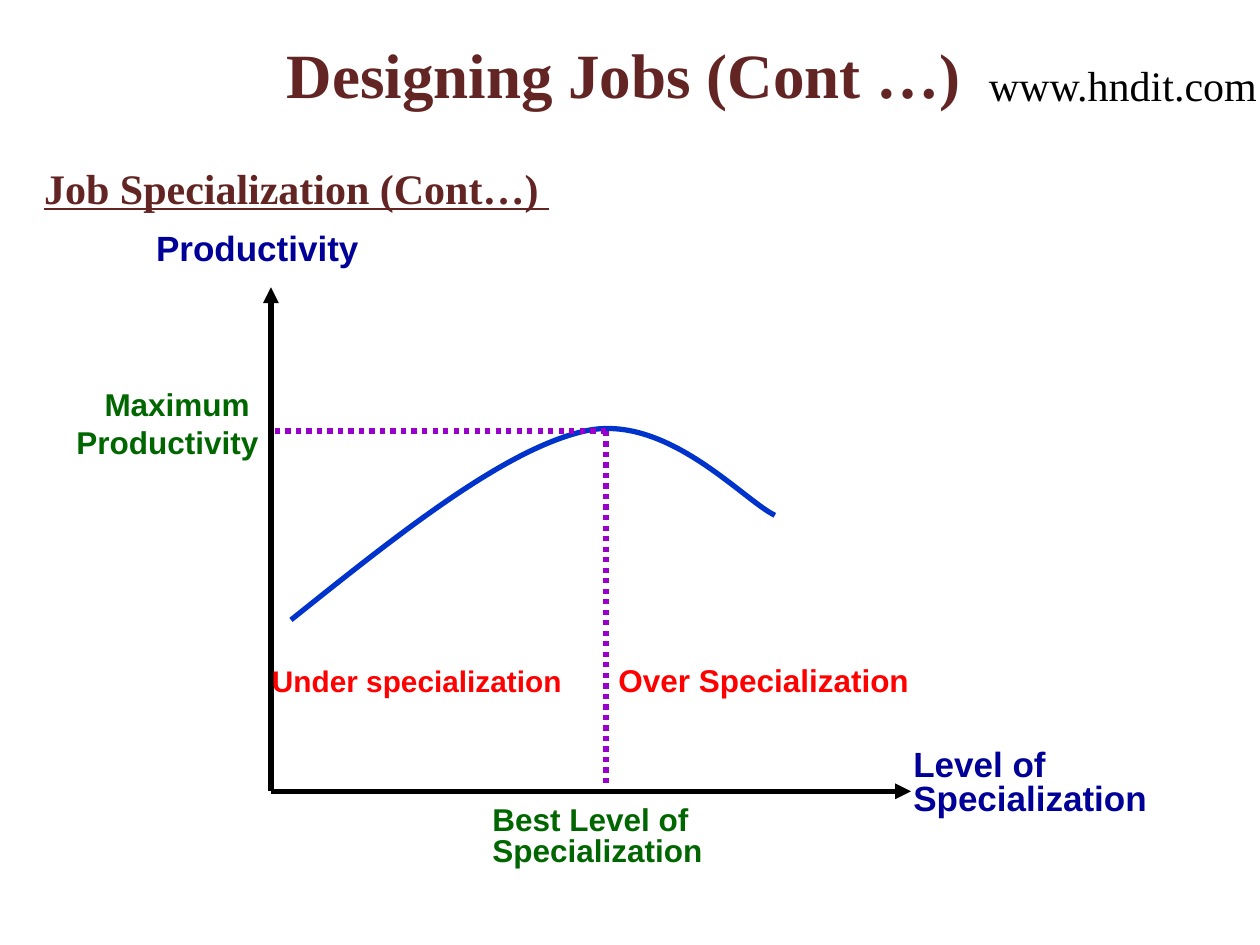
from lxml.etree import SubElement
from pptx import Presentation
from pptx.dml.color import RGBColor
from pptx.enum.dml import MSO_LINE
from pptx.enum.shapes import MSO_CONNECTOR
from pptx.enum.text import MSO_ANCHOR, MSO_AUTO_SIZE, PP_ALIGN
from pptx.oxml.ns import qn
from pptx.util import Inches, Pt

BLACK = RGBColor(0x00, 0x00, 0x00)
MAROON = RGBColor(0x63, 0x25, 0x23)
NAVY = RGBColor(0x00, 0x00, 0x99)
GREEN = RGBColor(0x00, 0x66, 0x00)
RED = RGBColor(0xFF, 0x00, 0x00)
BLUE = RGBColor(0x00, 0x33, 0xCC)
PURPLE = RGBColor(0x99, 0x00, 0xCC)

SERIF, SANS = "Times New Roman", "Arial"
COLUMNS, ROWS = 100, 75


class SlideBuilder:
    """Places elements on a grid of COLUMNS by ROWS cells."""

    line_width = Pt(3)

    def __init__(self, presentation):
        self.column = presentation.slide_width / COLUMNS
        self.row = presentation.slide_height / ROWS
        self.slide = presentation.slides.add_slide(presentation.slide_layouts[1])

    def point(self, x, y):
        return round(x * self.column), round(y * self.row)

    def add_text(self, shape, lines, size, color, font=SANS, bold=True,
                 underline=None, align=PP_ALIGN.LEFT, spacing=1.0):
        frame = shape.text_frame
        for index, line in enumerate(lines):
            paragraph = frame.add_paragraph() if index else frame.paragraphs[0]
            paragraph.alignment = align
            paragraph.line_spacing = spacing
            paragraph.space_before = Pt(0)
            run = paragraph.add_run()
            run.text = line
            run.font.name, run.font.size = font, Pt(size)
            run.font.bold, run.font.underline = bold, underline
            run.font.color.rgb = color

    def placeholder(self, index, box, text, size, **style):
        shape = self.slide.placeholders[index]
        shape.left, shape.top = self.point(*box[:2])
        shape.width, shape.height = self.point(*box[2:])
        shape.text_frame.auto_size = MSO_AUTO_SIZE.NONE
        self.add_text(shape, [text], size, MAROON, SERIF, **style)
        return shape

    def label(self, box, lines, size, color, wrap=False, **style):
        shape = self.slide.shapes.add_textbox(*self.point(*box[:2]),
                                              *self.point(*box[2:]))
        shape.text_frame.word_wrap = wrap
        shape.text_frame.auto_size = MSO_AUTO_SIZE.SHAPE_TO_FIT_TEXT
        self.add_text(shape, lines, size, color, **style)

    def line(self, start, end, color, dash=None, arrow=False):
        connector = self.slide.shapes.add_connector(
            MSO_CONNECTOR.STRAIGHT, *self.point(*start), *self.point(*end))
        connector.line.color.rgb = color
        connector.line.width = self.line_width
        if dash:
            connector.line.dash_style = dash
        properties = connector._element.spPr
        if arrow:
            SubElement(properties.find(qn("a:ln")), qn("a:tailEnd"), type="triangle")
        SubElement(properties, qn("a:effectLst"))

    def curve(self, points, color):
        """Draws Bezier segments: a start, then three points per segment."""
        start, *others = [self.point(*point) for point in points]
        builder = self.slide.shapes.build_freeform(*start)
        builder.add_line_segments(others, close=False)
        shape = builder.convert_to_shape()
        shape.shadow.inherit = False
        shape.fill.background()
        shape.line.color.rgb = color
        shape.line.width = self.line_width
        # Gather each three straight segments into one cubic segment
        segments = list(shape._element.iter(qn("a:lnTo")))
        for first in range(0, len(segments), 3):
            trio = segments[first:first + 3]
            cubic = SubElement(trio[0].getparent(), qn("a:cubicBezTo"))
            for segment in trio:
                cubic.append(segment[0])
                segment.getparent().remove(segment)


def main():
    presentation = Presentation()
    presentation.slide_width, presentation.slide_height = Inches(10), Inches(7.5)
    builder = SlideBuilder(presentation)

    # Title and heading
    title = builder.placeholder(0, (4.5, 1.7, 90, 8.3), "Designing Jobs (Cont …)",
                                36, align=PP_ALIGN.CENTER)
    title.text_frame.vertical_anchor = MSO_ANCHOR.MIDDLE
    heading = builder.placeholder(1, (2.5, 12.4, 95.8, 5.1),
                                  "Job Specialization (Cont…) ", 24, underline=True)
    properties = heading.text_frame.paragraphs[0]._p.get_or_add_pPr()
    properties.set("marL", "0")
    properties.set("indent", "0")
    SubElement(properties, qn("a:buNone"))

    # Axes
    origin = (21.5, 62.8)
    best = (48.1, 34.2)
    builder.line(origin, (origin[0], 22.8), BLACK, arrow=True)
    builder.line(origin, (72.3, origin[1]), BLACK, arrow=True)

    # Productivity curve and guides to its peak
    builder.curve([(23.1, 49.2), (31.6, 42.4), (40.1, 35.6), (46.5, 34.2),
                   (52.9, 32.8), (59, 39.7), (61.5, 40.9)], BLUE)
    for foot in ((best[0], 62.5), (origin[0], best[1])):
        builder.line(best, foot, PURPLE, dash=MSO_LINE.ROUND_DOT)

    # Labels
    builder.label((20.6, 52.1, 26.8, 3.8), ["Under specialization"], 17, RED)
    builder.label((48.1, 52, 25.4, 4), ["Over Specialization"], 18, RED)
    builder.label((11.4, 17.5, 18.1, 4.3), ["Productivity"], 20, NAVY)
    builder.label((71.5, 59.1, 20.6, 6.4), ["Level of", "Specialization"],
                  20, NAVY, spacing=0.8)
    builder.label((38.1, 63.6, 18.8, 5.8), ["Best Level of", "Specialization"],
                  18, GREEN, spacing=0.8)
    builder.label((3.3, 30.1, 18.2, 7), ["Maximum ", "Productivity"],
                  18, GREEN, wrap=True, align=PP_ALIGN.RIGHT)

    # Web address
    builder.label((77.5, 4.2, 24.2, 5), ["www.hndit.com"], 24, BLACK,
                  wrap=True, font=SERIF, bold=False)

    presentation.save("out.pptx")


if __name__ == "__main__":
    main()
